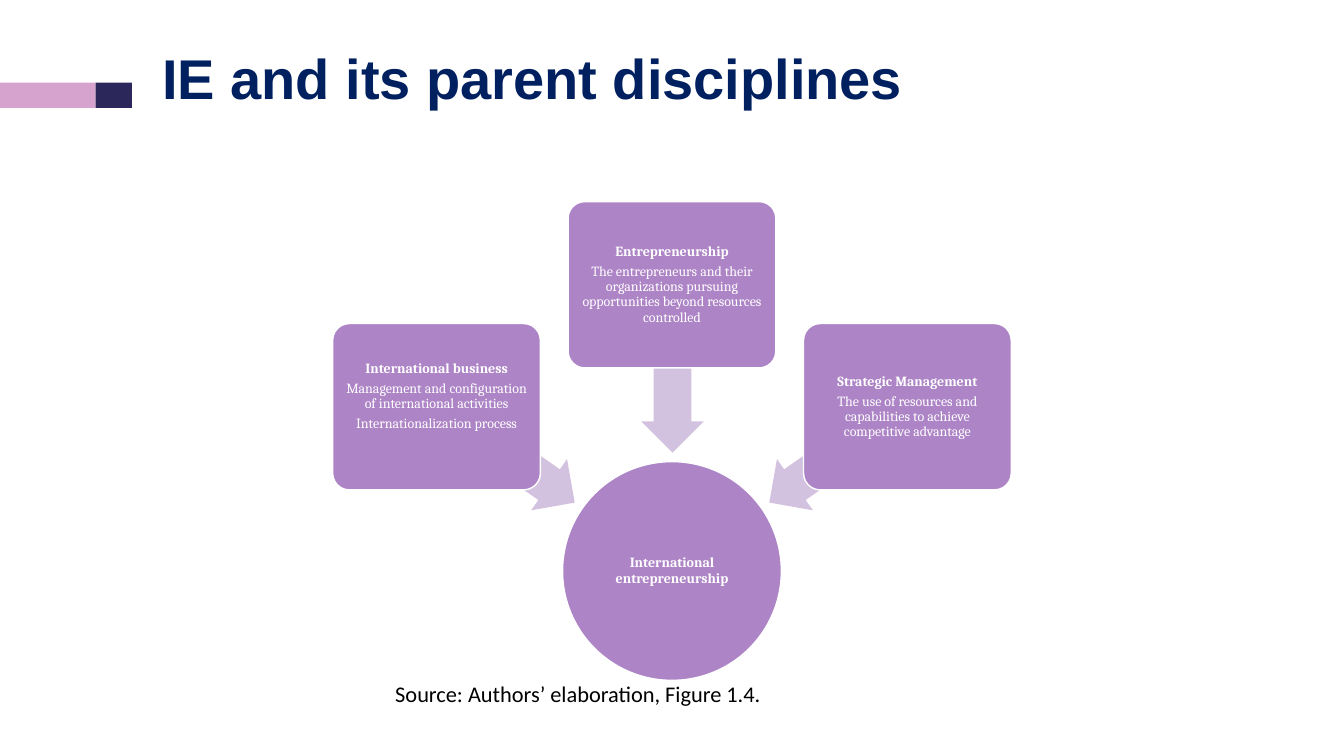
from pptx import Presentation
from pptx.dml.color import RGBColor
from pptx.enum import shapes, text
from pptx.util import Inches, Pt

NAVY = RGBColor(0x00, 0x20, 0x60)
PINK = RGBColor(0xD5, 0xA3, 0xCD)
INDIGO = RGBColor(0x2C, 0x27, 0x5B)
PURPLE = RGBColor(0xAD, 0x84, 0xC6)
LILAC = RGBColor(0xD3, 0xC2, 0xDF)
WHITE = RGBColor(0xFF, 0xFF, 0xFF)
BLACK = RGBColor(0x00, 0x00, 0x00)

deck = Presentation()
deck.slide_width, deck.slide_height = Inches(13.33), Inches(7.5)
slide = deck.slides.add_slide(deck.slide_layouts[5])


def add_block(preset, left, top, width, height, fill, outline=None):
    block = slide.shapes.add_shape(
        preset, Inches(left), Inches(top), Inches(width), Inches(height))
    block.shadow.inherit = False
    block.fill.solid()
    block.fill.fore_color.rgb = fill
    if outline is None:
        block.line.fill.background()
    else:
        block.line.color.rgb = outline
        block.line.width = Pt(1)
    return block


def write(shape, lines, font="Cambria", size=10, color=WHITE, align=text.PP_ALIGN.CENTER,
          spacing=0.9, after=3.5, inset=0.02, anchor=text.MSO_ANCHOR.MIDDLE, bold_first=True):
    """Fill a shape with one paragraph per line, the first one bold by default."""
    frame = shape.text_frame
    frame.word_wrap = True
    frame.vertical_anchor = anchor
    frame.margin_left = frame.margin_right = Inches(inset)
    frame.margin_top = frame.margin_bottom = Inches(inset)
    for index, line in enumerate(lines):
        paragraph = frame.paragraphs[0] if index == 0 else frame.add_paragraph()
        paragraph.text = line
        paragraph.alignment = align
        paragraph.line_spacing = spacing
        paragraph.space_after = Pt(after)
        paragraph.font.name = font
        paragraph.font.size = Pt(size)
        paragraph.font.bold = bold_first and index == 0
        paragraph.font.color.rgb = color


# Heading with its accent bar
for left, width, accent in [(0, 0.95, PINK), (0.95, 0.36, INDIGO)]:
    add_block(shapes.MSO_SHAPE.RECTANGLE, left, 0.82, width, 0.25, accent)

title = slide.shapes.title
title.left, title.top = Inches(1.51), Inches(0.32)
title.width, title.height = Inches(11.5), Inches(0.98)
write(title, ["IE and its parent disciplines"], font="Arial", size=40, color=NAVY,
      align=text.PP_ALIGN.LEFT, after=0, inset=0.1)

# Parent disciplines pointing at the shared field
field = add_block(shapes.MSO_SHAPE.OVAL, 5.58, 4.58, 2.17, 2.17, PURPLE, WHITE)
write(field, ["International entrepreneurship"], inset=0.01)

# Box top, arrow centre, arrow rotation, extra space below the text, wording
disciplines = [
    (3.21, (5.02, 4.51), 215, 0.2,
     ["International business",
      "Management and configuration of international activities",
      "Internationalization process"]),
    (2.0, (6.67, 3.66), 270, 0,
     ["Entrepreneurship",
      "The entrepreneurs and their organizations pursuing opportunities "
      "beyond resources controlled"]),
    (3.21, (8.31, 4.51), 325, 0,
     ["Strategic Management",
      "The use of resources and capabilities to achieve competitive advantage"]),
]
ARROW_WIDTH, ARROW_HEIGHT = 1.66, 0.62
for column, (top, (center_x, center_y), rotation, lift, lines) in enumerate(disciplines):
    arrow = add_block(shapes.MSO_SHAPE.LEFT_ARROW, center_x - ARROW_WIDTH / 2,
                      center_y - ARROW_HEIGHT / 2, ARROW_WIDTH, ARROW_HEIGHT, LILAC)
    arrow.adjustments[0], arrow.adjustments[1] = 0.6, 0.5
    arrow.rotation = rotation

    discipline = add_block(shapes.MSO_SHAPE.ROUNDED_RECTANGLE, 3.3 + 2.335 * column, top,
                           2.06, 1.65, PURPLE, WHITE)
    discipline.adjustments[0] = 0.1
    write(discipline, lines)
    discipline.text_frame.margin_bottom = Inches(0.02 + lift)

source = slide.shapes.add_textbox(Inches(3.15), Inches(6.7), Inches(5.01), Inches(0.37))
write(source, ["Source: Authors’ elaboration, Figure 1.4."], font="Calibri", size=16,
      color=BLACK, align=text.PP_ALIGN.LEFT, spacing=1.0, after=0, inset=0.05,
      anchor=text.MSO_ANCHOR.TOP, bold_first=False)
source.text_frame.margin_left = Inches(0.77)

deck.save("out.pptx")
